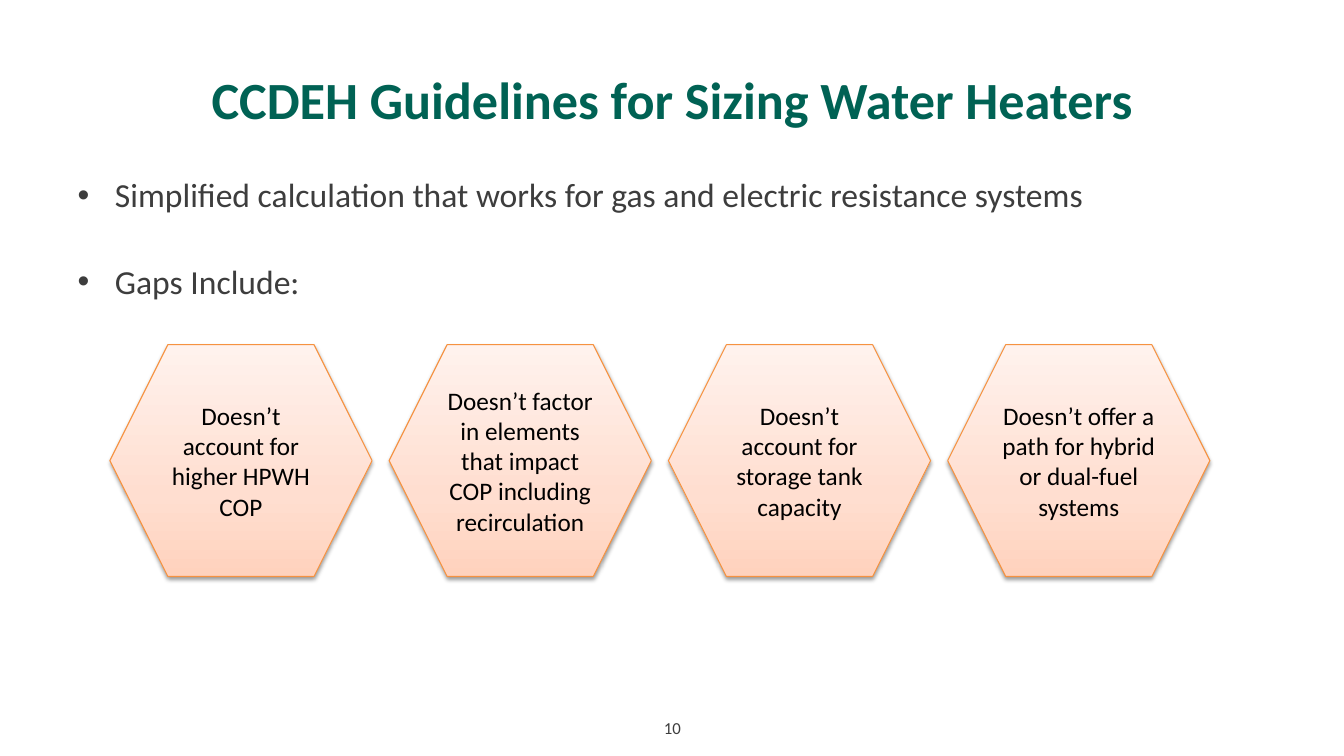
"""Build the slide on gaps in the CCDEH water heater sizing guidelines."""
import pptx
import pptx.dml.color
import pptx.enum.dml
import pptx.enum.shapes
import pptx.enum.text
import pptx.oxml
import pptx.oxml.ns
import pptx.util

Inches = pptx.util.Inches
Pt = pptx.util.Pt
qn = pptx.oxml.ns.qn
CENTER = pptx.enum.text.PP_ALIGN.CENTER
MIDDLE = pptx.enum.text.MSO_ANCHOR.MIDDLE

COLORS = {
    "title": "006254",
    "body": "3D3D3D",
    "label": "000000",
    "outline": "F69240",
    "shadow": "000000",
}
GRADIENT = [(0, "FFD2BD"), (35, "FFDED0"), (100, "FFF2ED")]
POINTS = [
    "Simplified calculation that works for gas and electric resistance systems",
    "Gaps Include:",
]
GAPS = [
    "Doesn’t account for higher HPWH COP",
    "Doesn’t factor in elements that impact COP including recirculation",
    "Doesn’t account for storage tank capacity",
    "Doesn’t offer a path for hybrid or dual-fuel systems",
]


def rgb(name):
    return pptx.dml.color.RGBColor.from_string(COLORS[name])


def place(box, left, top, width, height):
    box.left, box.top = Inches(left), Inches(top)
    box.width, box.height = Inches(width), Inches(height)


def style(paragraph, size, color, bold=False):
    for span in paragraph.runs:
        span.font.name = "Calibri"
        span.font.size = Pt(size)
        span.font.bold = bold
        span.font.color.rgb = rgb(color)


def write_centered(box, text, size, color, bold=False):
    frame = box.text_frame
    frame.word_wrap = True
    frame.auto_size = pptx.enum.text.MSO_AUTO_SIZE.NONE
    frame.text = text
    paragraph = frame.paragraphs[0]
    paragraph.alignment = CENTER
    style(paragraph, size, color, bold)


def add_title(page, text):
    title = page.shapes.title
    place(title, 0.67, 0.5, 12, 0.96)
    write_centered(title, text, 37.3, "title", bold=True)
    title.text_frame.vertical_anchor = MIDDLE


def add_points(page, points):
    body = page.placeholders[1]
    place(body, 0.67, 1.72, 11.9, 1.18)
    frame = body.text_frame
    frame.auto_size = pptx.enum.text.MSO_AUTO_SIZE.NONE
    frame.text = "\n".join(points)
    for index, paragraph in enumerate(frame.paragraphs):
        properties = paragraph._p.get_or_add_pPr()
        properties.set("marL", str(Inches(0.37)))
        properties.set("indent", str(Inches(-0.37)))
        paragraph.line_spacing = 0.9
        paragraph.space_before = Pt(36 if index else 0)
        style(paragraph, 24, "body")


def add_color(parent, value):
    color = parent.makeelement(qn("a:srgbClr"), {"val": value})
    parent.append(color)
    return color


def fill_gradient(shape):
    shape.fill.gradient()
    shape.fill.gradient_angle = 90
    stops = shape._element.spPr.find(".//" + qn("a:gsLst"))
    for stop in list(stops):
        stops.remove(stop)
    for position, value in GRADIENT:
        stop = stops.makeelement(qn("a:gs"), {"pos": str(position * 1000)})
        stops.append(stop)
        add_color(stop, value)


def cast_shadow(shape):
    shape.shadow.inherit = False
    effects = shape._element.spPr.find(qn("a:effectLst"))
    shadow = effects.makeelement(qn("a:outerShdw"), {
        "blurRad": str(Pt(3.1)), "dist": str(Pt(1.6)),
        "dir": "5400000", "rotWithShape": "0",
    })
    effects.append(shadow)
    color = add_color(shadow, COLORS["shadow"])
    color.append(color.makeelement(qn("a:alpha"), {"val": "38000"}))


def add_hexagon(page, left, text):
    hexagon = page.shapes.add_shape(
        pptx.enum.shapes.MSO_SHAPE.HEXAGON,
        Inches(left), Inches(3.42), Inches(2.6), Inches(2.3))
    fill_gradient(hexagon)
    hexagon.line.color.rgb = rgb("outline")
    hexagon.line.width = Pt(0.75)
    cast_shadow(hexagon)
    write_centered(hexagon, text, 18, "label")
    hexagon.text_frame.vertical_anchor = MIDDLE


def add_page_number(page, number):
    box = page.shapes.add_textbox(
        Inches(6.2), Inches(7.07), Inches(0.94), Inches(0.3))
    write_centered(box, number, 12, "body")


def main():
    deck = pptx.Presentation()
    deck.slide_width, deck.slide_height = Inches(13.33), Inches(7.5)
    page = deck.slides.add_slide(deck.slide_layouts[1])
    add_title(page, "CCDEH Guidelines for Sizing Water Heaters")
    add_points(page, POINTS)
    for column, gap in enumerate(GAPS):
        add_hexagon(page, 1.09 + column * 2.77, gap)
    add_page_number(page, "10")
    deck.save("out.pptx")


if __name__ == "__main__":
    main()
